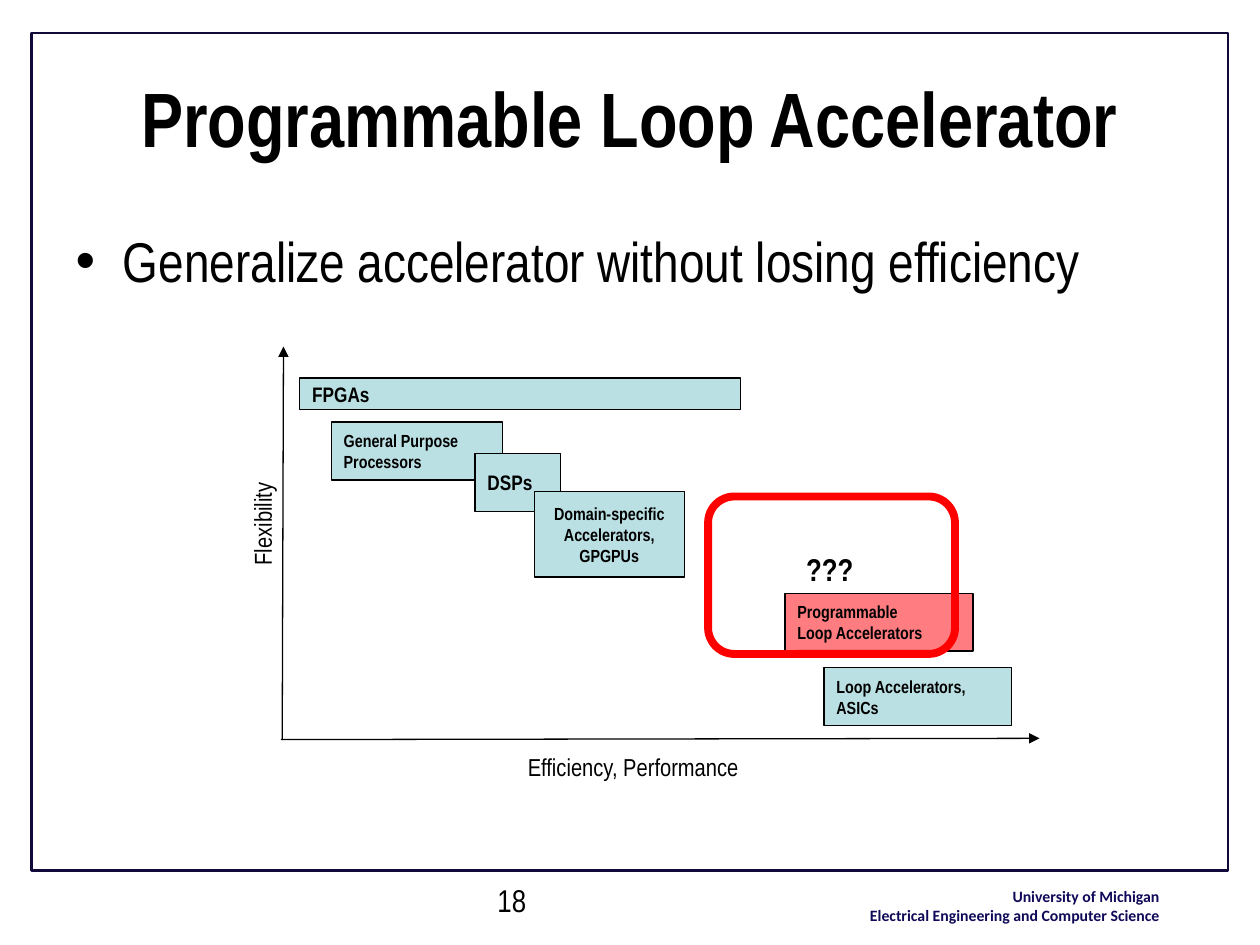
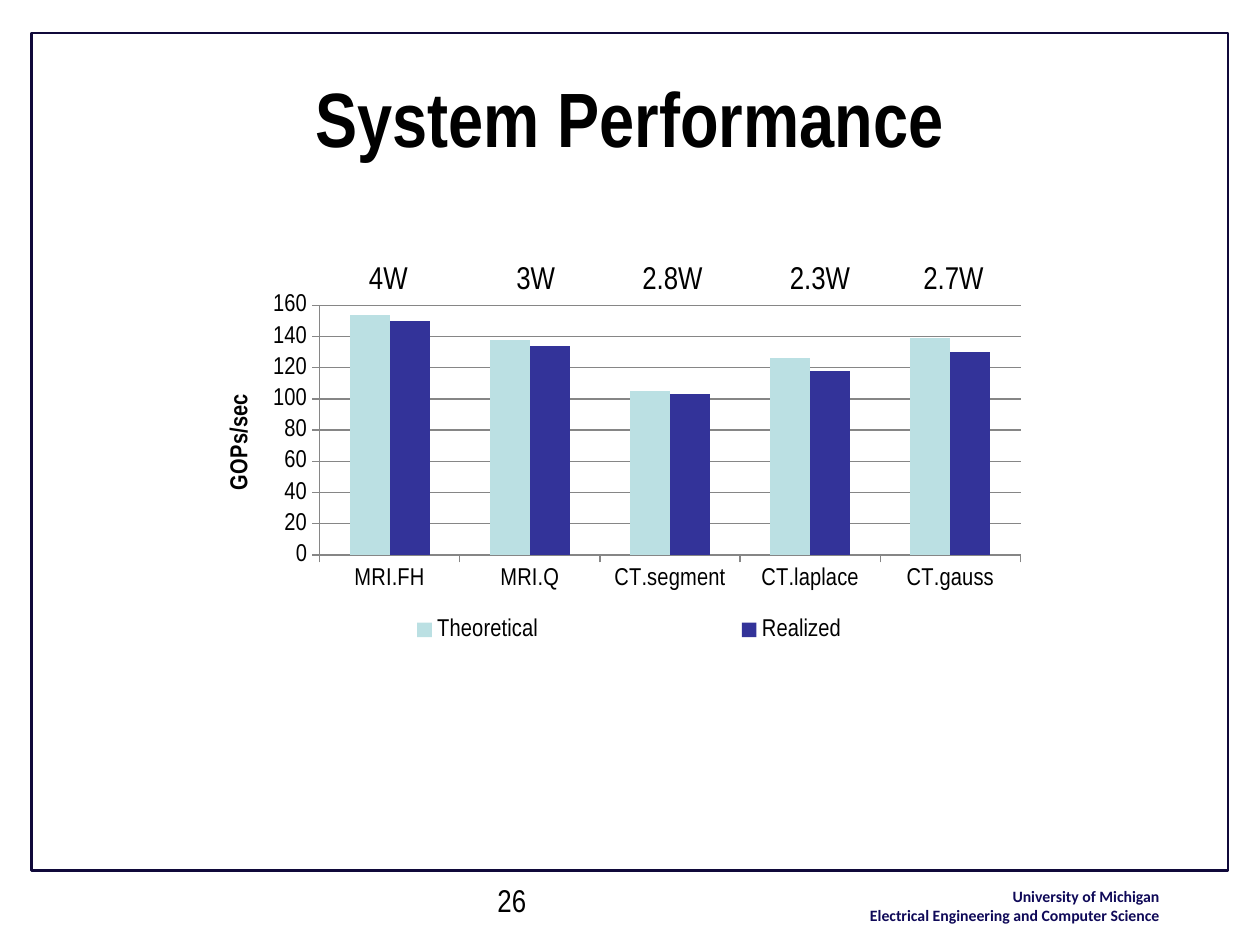
from lxml import etree
from pptx import Presentation
from pptx.chart.data import CategoryChartData
from pptx.dml.color import RGBColor
from pptx.enum.chart import XL_CHART_TYPE as ChartType, XL_LEGEND_POSITION as LegendPos, XL_TICK_MARK as Tick
from pptx.enum.shapes import MSO_CONNECTOR as Connector, MSO_SHAPE as Shape
from pptx.enum.text import MSO_ANCHOR as Anchor, MSO_AUTO_SIZE as AutoSize, PP_ALIGN as Align
from pptx.oxml.ns import qn
from pptx.util import Inches, Pt

BLACK = RGBColor(0x00, 0x00, 0x00)
NAVY = RGBColor(0x0F, 0x09, 0x58)
FRAME = RGBColor(0x10, 0x09, 0x3A)
AQUA = RGBColor(0xBB, 0xE0, 0xE3)
INDIGO = RGBColor(0x33, 0x33, 0x99)
SALMON = RGBColor(0xFF, 0x7C, 0x80)
RED = RGBColor(0xFF, 0x00, 0x00)
GRAY = RGBColor(0x86, 0x86, 0x86)
FONT = "Arial Narrow"

prs = Presentation()
prs.slide_width, prs.slide_height = Inches(10), Inches(7.5)
COL = prs.slide_width / 100
ROW = prs.slide_height / 75


def grid(x, y, w, h):
    """Turn columns and rows of a 100 by 75 grid into slide lengths."""
    return int(x * COL), int(y * ROW), int(w * COL), int(h * ROW)


def write(tf, text, size=18, bold=False, font=FONT, color=BLACK,
          align=Align.LEFT, anchor=Anchor.TOP, wrap=False):
    tf.auto_size = AutoSize.NONE
    tf.word_wrap = wrap
    tf.vertical_anchor = anchor
    for i, line in enumerate(text.split("\n")):
        p = tf.paragraphs[0] if i == 0 else tf.add_paragraph()
        p.alignment = align
        p.space_before = Pt(0)
        r = p.add_run()
        r.text = line
        r.font.name, r.font.size, r.font.bold = font, Pt(size), bold
        r.font.color.rgb = color


# Shared frame, footer, number and title
slides = []
for layout, number, title in [(1, "18", "Programmable Loop Accelerator"),
                              (5, "26", "System Performance")]:
    s = prs.slides.add_slide(prs.slide_layouts[layout])
    slides.append(s)
    frame = s.shapes.add_shape(Shape.RECTANGLE, *grid(2.5, 2.6, 95, 66.5))
    frame.shadow.inherit = False
    frame.fill.background()
    frame.line.color.rgb, frame.line.width = FRAME, Pt(1.25)
    footer = s.shapes.add_textbox(*grid(64, 69.9, 29, 4))
    write(footer.text_frame, "University of Michigan\nElectrical Engineering and Computer Science",
          size=9, bold=True, font="Calibri", color=NAVY, align=Align.RIGHT)
    write(s.shapes.add_textbox(*grid(38.5, 69.4, 23.3, 4.4)).text_frame, number)
    head = s.shapes.title
    head.left, head.top, head.width, head.height = grid(5, 3, 90, 12.5)
    write(head.text_frame, title, size=44, bold=True, align=Align.CENTER,
          anchor=Anchor.MIDDLE, wrap=True)

loop_slide, perf_slide = slides

# Bullet
body = loop_slide.placeholders[1]
body.left, body.top, body.width, body.height = grid(5, 17.5, 90, 49.5)
write(body.text_frame, "Generalize accelerator without losing efficiency", size=32, wrap=True)

# Axes of the trade-off diagram
for x1, y1, x2, y2 in [(22.3, 58.7, 82.5, 58.6), (22.4, 58.7, 22.5, 27.5)]:
    axis = loop_slide.shapes.add_connector(Connector.STRAIGHT, *grid(x1, y1, x2, y2))
    axis.line.color.rgb, axis.line.width = BLACK, Pt(0.75)
    etree.SubElement(axis.line._get_or_add_ln(), qn("a:tailEnd"), type="triangle")
    etree.SubElement(axis._element.spPr, qn("a:effectLst"))
for text, at, angle in [("Efficiency, Performance", (40.9, 59.2, 29.2, 3.3), 0),
                        ("Flexibility", (15.8, 39.2, 10, 3.3), 270)]:
    label = loop_slide.shapes.add_textbox(*grid(*at))
    label.rotation = angle
    write(label.text_frame, text, size=14)

# Kinds of hardware, placed by efficiency and flexibility
for text, at, size, fill, align in [
    ("FPGAs", (23.8, 30, 35, 2.5), 12, AQUA, Align.LEFT),
    ("Loop Accelerators,\nASICs", (65.4, 53, 14.9, 4.6), 10, AQUA, Align.LEFT),
    ("Programmable\nLoop Accelerators", (62.3, 47.1, 14.9, 4.6), 10, SALMON, Align.LEFT),
    ("General Purpose\nProcessors", (26.3, 33.5, 13.6, 4.6), 10, AQUA, Align.LEFT),
    ("DSPs", (37.7, 36, 6.8, 4.6), 12, AQUA, Align.LEFT),
    ("Domain-specific\nAccelerators,\nGPGPUs", (42.4, 39, 11.9, 6.8), 10, AQUA, Align.CENTER),
]:
    sp = loop_slide.shapes.add_shape(Shape.RECTANGLE, *grid(*at))
    sp.shadow.inherit = False
    sp.fill.solid()
    sp.fill.fore_color.rgb = fill
    sp.line.color.rgb, sp.line.width = BLACK, Pt(1 if fill == SALMON else 0.75)
    write(sp.text_frame, text, size=size, bold=True, align=align, anchor=Anchor.MIDDLE, wrap=True)

# Highlighted target region
target = loop_slide.shapes.add_shape(Shape.ROUNDED_RECTANGLE, *grid(56.2, 39.4, 19.6, 12.5))
target.shadow.inherit = False
target.fill.background()
target.line.color.rgb, target.line.width = RED, Pt(4.5)
write(loop_slide.shapes.add_textbox(*grid(63, 43.2, 5.8, 4)).text_frame, "???", bold=True)

# Performance chart
data = CategoryChartData()
data.categories = ["MRI.FH", "MRI.Q", "CT.segment", "CT.laplace", "CT.gauss"]
data.add_series("Theoretical", (154, 138, 105, 126, 139))
data.add_series("Realized", (150, 134, 103, 118, 130))
chart = perf_slide.shapes.add_chart(ChartType.COLUMN_CLUSTERED,
                                    *grid(17.6, 23.3, 64.7, 28.4), data).chart
chart.has_title = False
chart.font.name, chart.font.size = FONT, Pt(14)
chart.font.color.rgb = BLACK
plot = chart.plots[0]
plot.vary_by_categories = False
plot.gap_width, plot.overlap = 150, 0
for series, color in zip(plot.series, (AQUA, INDIGO)):
    series.format.fill.solid()
    series.format.fill.fore_color.rgb = color

values = chart.value_axis
values.minimum_scale, values.maximum_scale, values.major_unit = 0, 160, 20
values.major_gridlines.format.line.color.rgb = GRAY
for axis in (values, chart.category_axis):
    axis.major_tick_mark = Tick.OUTSIDE
    axis.format.line.color.rgb = GRAY
write(values.axis_title.text_frame, "GOPs/sec", size=14, bold=True, align=Align.CENTER)
next(values.axis_title._element.iter(qn("a:bodyPr"))).set("rot", "-5400000")

# Fixed places of the plot and the legend within the chart
chart.has_legend = True
chart.legend.position = LegendPos.BOTTOM
chart.legend.include_in_layout = False
plot_area = chart._chartSpace.chart.plotArea
for parent, index, target_area, shares in [
    (plot_area, 0, "inner", (0.12, 0.03, 0.86, 0.7)),
    (chart.legend._element, 1, None, (0, 0.88, 1, 0.12)),
]:
    for old in parent.findall(qn("c:layout")):
        parent.remove(old)
    layout = etree.Element(qn("c:layout"))
    manual = etree.SubElement(layout, qn("c:manualLayout"))
    if target_area:
        etree.SubElement(manual, qn("c:layoutTarget"), val=target_area)
    for mode in ("xMode", "yMode"):
        etree.SubElement(manual, qn(f"c:{mode}"), val="edge")
    for name, share in zip("xywh", shares):
        etree.SubElement(manual, qn(f"c:{name}"), val=str(share))
    parent.insert(index, layout)

# Power above each pair of columns
for watts, x, width in [("4W", 28.3, 5.1), ("3W", 40, 5.1), ("2.8W", 50, 6.9),
                        ("2.3W", 61.7, 6.9), ("2.7W", 72.3, 6.9)]:
    write(perf_slide.shapes.add_textbox(*grid(x, 20, width, 4)).text_frame, watts)

prs.save("out.pptx")
